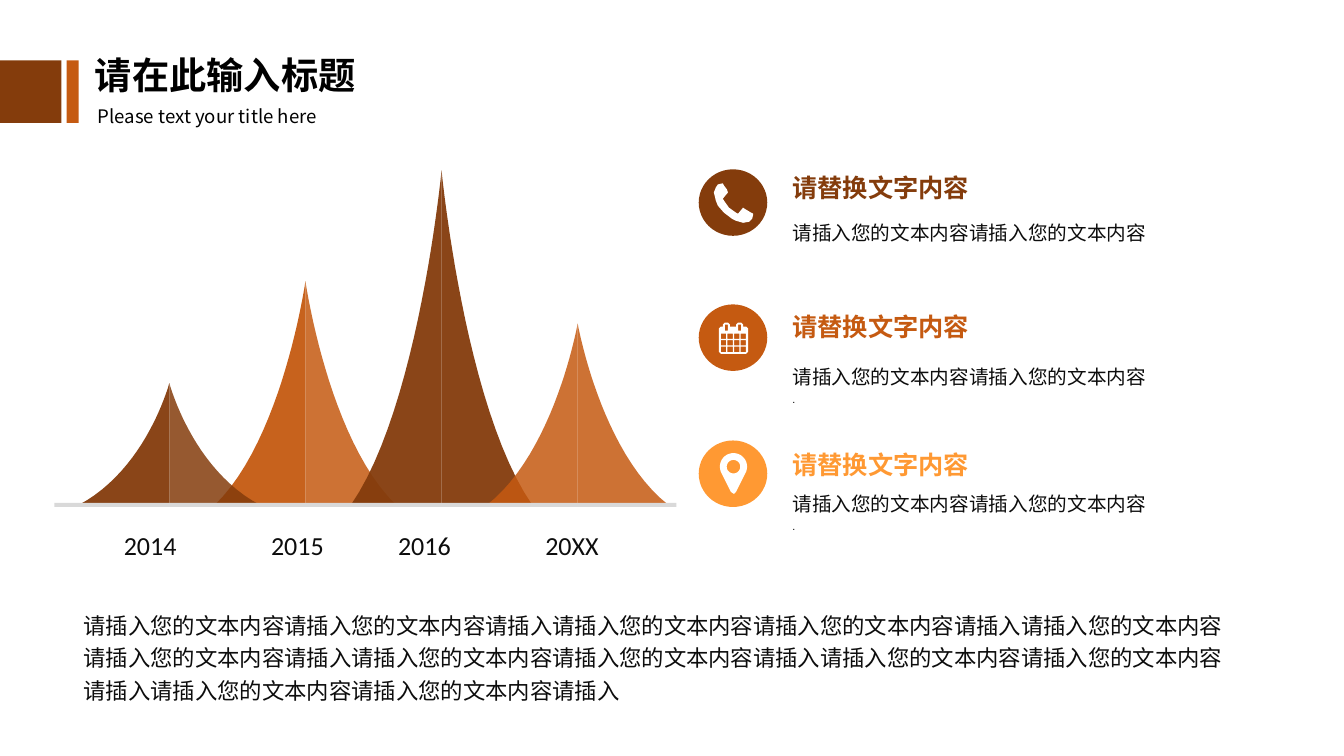
from math import cos, radians, sin

from lxml import etree
from pptx import Presentation
from pptx.dml.color import RGBColor
from pptx.enum.shapes import MSO_SHAPE
from pptx.enum.text import MSO_ANCHOR, PP_ALIGN
from pptx.oxml.ns import qn
from pptx.util import Pt

PX = 9144  # 100 px to the inch
RECT, OVAL = MSO_SHAPE.RECTANGLE, MSO_SHAPE.OVAL
TOP, MIDDLE = MSO_ANCHOR.TOP, MSO_ANCHOR.MIDDLE
LEFT = PP_ALIGN.LEFT

BROWN = RGBColor(0x84, 0x3C, 0x0C)
RUST = RGBColor(0xC5, 0x5A, 0x11)
ORANGE = RGBColor(0xFF, 0x99, 0x33)
GRAY = RGBColor(0xD9, 0xD9, 0xD9)
INK = RGBColor(0x0D, 0x0D, 0x0D)
BLACK = RGBColor(0, 0, 0)
WHITE = RGBColor(0xFF, 0xFF, 0xFF)

CJK, ARIAL, CALIBRI = "Noto Sans CJK SC", "Arial", "Calibri"
HEADING = "请替换文字内容"
PHRASE = "请插入您的文本内容"
INTRO = PHRASE * 2 + "请插入"

BASE_Y, HALF_PEAK = 501, 90
# Center x, top, color, left opacity, right opacity
PEAKS = [
    (303, 279, RUST, 95, 85),
    (438, 169, BROWN, 95, 95),
    (168, 380, BROWN, 95, 85),
    (573, 321, RUST, 85, 85),
]
YEARS = [("2014", 113), ("2015", 259), ("2016", 385), ("20XX", 531)]

PHONE = [
    (746, 217), (743, 220), (737, 221), (730, 219), (726, 217), (718, 211),
    (712, 204), (710, 199), (708, 191), (710, 186), (712, 183), (716, 182),
    (717, 182), (718, 184), (721, 188), (722, 191), (717, 197), (718, 199),
    (723, 206), (730, 211), (732, 212), (737, 206), (740, 208), (745, 211),
    (747, 212), (747, 213),
]


def place(shape, x, y, w, h):
    shape.left, shape.top, shape.width, shape.height = (v * PX for v in (x, y, w, h))


def paint(shape, color, opacity=100):
    shape.shadow.inherit = False
    shape.line.fill.background()
    shape.fill.solid()
    shape.fill.fore_color.rgb = color
    if opacity < 100:
        clr = shape.fill._xPr.find(".//" + qn("a:srgbClr"))
        etree.SubElement(clr, qn("a:alpha"), val=str(opacity * 1000))


def add_block(s, kind, x, y, w, h, color):
    shape = s.shapes.add_shape(kind, x * PX, y * PX, w * PX, h * PX)
    paint(shape, color)


def add_outline(s, contours, color, opacity=100):
    """Draw closed contours as one freeform; inner contours become holes."""
    emu = [[(round(x * PX), round(y * PX)) for x, y in c] for c in contours]
    fb = s.shapes.build_freeform(*emu[0][0], scale=1.0)
    fb.add_line_segments(emu[0][1:], close=True)
    for hole in emu[1:]:
        fb.move_to(*hole[0])
        fb.add_line_segments(hole[1:], close=True)
    paint(fb.convert_to_shape(), color, opacity)


def add_run(p, text, size, font, color, bold=False):
    r = p.add_run()
    r.text = text
    r.font.size, r.font.name, r.font.bold = Pt(size), font, bold
    r.font.color.rgb = color
    etree.SubElement(r._r.get_or_add_rPr(), qn("a:ea"), typeface=CJK)


def add_text(s, x, y, w, h, text, size, font, color,
             bold=False, spacing=1.0, inset=0, wrap=True):
    tf = s.shapes.add_textbox(x * PX, y * PX, w * PX, h * PX).text_frame
    tf.word_wrap = wrap
    tf.margin_left = tf.margin_right = inset * PX
    tf.margin_top = tf.margin_bottom = inset * PX // 2
    p = tf.paragraphs[0]
    p.line_spacing = spacing
    add_run(p, text, size, font, color, bold)
    return tf


def add_header(s):
    title = s.shapes.title
    place(title, 84, 47, 501, 55)
    tf = title.text_frame
    tf.vertical_anchor = MIDDLE
    tf.margin_left = tf.margin_right = 10 * PX
    tf.margin_top = tf.margin_bottom = 5 * PX
    p = tf.paragraphs[0]
    p.alignment = LEFT
    add_run(p, "请在此输入标题", 26.6, CJK, BLACK, True)
    add_text(s, 87, 99, 257, 33, "Please text your title here", 13.3, CJK,
             BLACK, inset=10)
    add_block(s, RECT, 0, 60, 61, 62, BROWN)
    add_block(s, RECT, 66, 60, 12, 62, RUST)


def add_half_peak(s, x, top, side, color, opacity):
    height = BASE_Y - top
    curve = []
    for i in range(25):
        t = i / 24
        dx = 3 * (1 - t) * t * t * HALF_PEAK / 4 + t ** 3 * HALF_PEAK
        dy = 3 * (1 - t) * t * t * height * 0.707 + t ** 3 * height
        curve.append((x + side * dx, top + dy))
    add_outline(s, [curve + [(x, BASE_Y)]], color, opacity)


def box(x, y, w, h):
    return [(x, y), (x + w, y), (x + w, y + h), (x, y + h)]


def arc(x, y, radius, start, end):
    return [(x + radius * cos(radians(a)), y + radius * sin(radians(a)))
            for a in range(start, end + 1, 10)]


def phone_icon():
    return [PHONE]


def calendar_icon():
    outline = [(713, 326), (715, 324)]
    for x in (717, 730):  # binder rings
        outline += [(x, 324), (x, 322), (x + 2, 320), (x + 5, 320),
                    (x + 7, 322), (x + 7, 324)]
    outline += [(740, 324), (742, 326), (742, 349), (740, 351), (715, 351), (713, 349)]
    slots = [box(x, 322, 3, 6) for x in (719, 732)]
    days = [box(715 + 6.5 * col, 331 + 6.5 * row, 5.3, 5.3)
            for row in range(3) for col in range(4)]
    return [outline] + slots + days


def pin_icon():
    body = arc(727.5, 463, 13.5, 160, 380) + [(730, 488), (728, 490), (725, 488)]
    return [body, arc(727.5, 463, 6.7, 0, 350)]


# Icon, color, circle top, heading top, heading spacing, body top, body spacing, dot
ITEMS = [
    (phone_icon, BROWN, 168, 156, 1.5, 207, 1.5, False),
    (calendar_icon, RUST, 302, 303, 1.2, 357, 1.2, True),
    (pin_icon, ORANGE, 437, 440, 1.2, 483, 1.2, True),
]


def add_item(s, icon, color, circle_y, head_y, head_ls, body_y, body_ls, dot):
    add_block(s, OVAL, 693, circle_y, 68, 66, color)
    add_outline(s, icon(), WHITE)
    add_text(s, 786, head_y, 423, 36, HEADING, 18, ARIAL, color, True, head_ls)
    tf = add_text(s, 786, body_y, 427, 74 if dot else 35, PHRASE * 2, 14, CJK, INK,
                  spacing=body_ls)
    if dot:
        p = tf.add_paragraph()
        p.line_spacing, p.space_before = body_ls, Pt(1.5)
        add_run(p, ".", 7.6, ARIAL, BLACK)


def main():
    prs = Presentation()
    prs.slide_width, prs.slide_height = 1333 * PX, 750 * PX
    s = prs.slides.add_slide(prs.slide_layouts[5])
    add_header(s)

    # Peaks over the baseline, with years below
    for year, x in YEARS:
        add_text(s, x, 520, 73, 42, year, 18.6, CALIBRI, INK, inset=10, wrap=False)
    for x, top, color, left_opacity, right_opacity in PEAKS:
        add_half_peak(s, x, top, -1, color, left_opacity)
        add_half_peak(s, x, top, 1, color, right_opacity)
    add_block(s, RECT, 54, 499, 617, 4, GRAY)

    # Icon list
    for item in ITEMS:
        add_item(s, *item)

    # Closing paragraph
    add_text(s, 83, 602, 1131, 119, INTRO * 5 + PHRASE * 2 + "请插入", 16, CJK, INK,
             spacing=1.2)
    prs.save("out.pptx")


if __name__ == "__main__":
    main()
